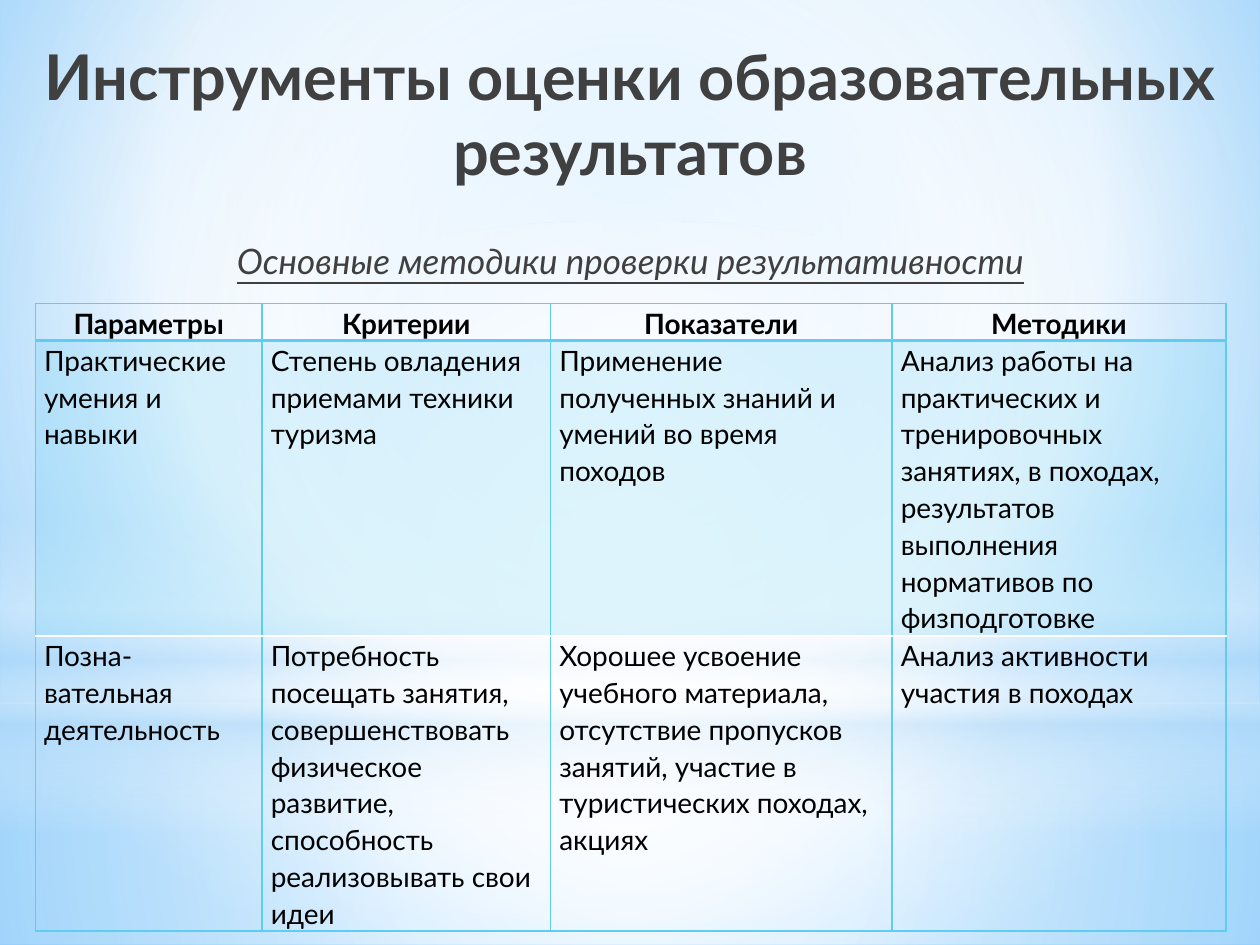
from lxml.etree import SubElement as Sub
from pptx import Presentation
from pptx.dml.color import RGBColor
from pptx.enum.shapes import MSO_SHAPE as Kind
from pptx.enum.text import MSO_ANCHOR as Anchor, MSO_AUTO_SIZE as Auto, PP_ALIGN as Align
from pptx.oxml.ns import qn
from pptx.util import Inches, Pt

FONT, DARK, CYAN = "Lato", "404040", "5ECCF3"
WHITE, PALE = "FFFFFF", "B4DCFA"
MID = (50, 50, 50, 50)
COLS = (1.8, 2.29, 2.71, 2.65)
TALL = (0.28, 2.34, 2.34)
ROWS = (
    ("Параметры", "Критерии", "Показатели", "Методики"),
    (
        "Практические\nумения и навыки",
        "Степень овладения\nприемами техники\nтуризма",
        "Применение\nполученных знаний и умений во время\nпоходов",
        "Анализ работы на практических и тренировочных занятиях, в походах, "
        "результатов выполнения нормативов по физподготовке",
    ),
    (
        "Позна-вательная деятельность",
        "Потребность посещать занятия, совершенствовать физическое развитие, "
        "способность реализовывать свои идеи",
        "Хорошее усвоение учебного материала, отсутствие пропусков занятий, "
        "участие в туристических походах, акциях",
        "Анализ активности участия в походах",
    ),
)


def rgb(code):
    """Turn a hex string into a colour."""
    return RGBColor.from_string(code)


def tint(node, code, alpha=100):
    """Add a colour with its opacity in percent."""
    clr = Sub(node, qn("a:srgbClr"), val=code)
    if alpha < 100:
        Sub(clr, qn("a:alpha"), val=str(alpha * 1000))


def blend(owner, fill, stops, focus=None):
    """Fill the owner with a circular gradient, or a vertical one without focus."""
    fill.solid()
    old = owner.find(".//" + qn("a:solidFill"))
    grad = old.makeelement(qn("a:gradFill"), {"rotWithShape": "1"})
    old.getparent().replace(old, grad)
    marks = Sub(grad, qn("a:gsLst"))
    for pos, code, alpha in stops:
        tint(Sub(marks, qn("a:gs"), pos=str(pos * 1000)), code, alpha)
    if focus:
        sides = {side: str(part * 1000) for side, part in zip("ltrb", focus)}
        Sub(Sub(grad, qn("a:path"), path="circle"), qn("a:fillToRect"), **sides)
    else:
        Sub(grad, qn("a:lin"), ang="5400000", scaled="0")


def glow(slide, kind, top, high, stops, focus=None):
    """Add a full-width gradient shape to the backdrop."""
    shape = slide.shapes.add_shape(kind, 0, Inches(top), Inches(10), Inches(high))
    shape.shadow.inherit = False
    shape.line.fill.background()
    blend(shape.element, shape.fill, stops, focus)


def style(par, size, code, align, bold=False):
    """Set the font and alignment of a paragraph."""
    font = par.font
    font.name, font.size, font.bold = FONT, Pt(size), bold
    font.color.rgb = rgb(code)
    par.alignment = align


def title(slide, text):
    """Fill the title placeholder and bring it above the backdrop."""
    shape = slide.shapes.title
    slide.shapes.element.append(shape.element)
    shape.left, shape.top = Inches(0), Inches(0.2)
    shape.width, shape.height = Inches(10), Inches(1.39)
    frame = shape.text_frame
    frame.text = text
    frame.auto_size, frame.vertical_anchor = Auto.NONE, Anchor.MIDDLE
    style(frame.paragraphs[0], 36, DARK, Align.CENTER, True)


def label(slide, text):
    """Add the underlined heading of the table."""
    box = slide.shapes.add_textbox(Inches(0.4), Inches(1.85), Inches(9.21), Inches(0.44))
    frame = box.text_frame
    frame.word_wrap = True
    frame.text = text
    par = frame.paragraphs[0]
    style(par, 20, DARK, Align.CENTER)
    par.font.italic = par.font.underline = True


def edge(cell, side, width):
    """Draw one border of a cell."""
    line = Sub(cell._tc.get_or_add_tcPr(), qn("a:ln" + side), w=str(Pt(width)))
    tint(Sub(line, qn("a:solidFill")), CYAN)


def write(cell, text, head, align):
    """Set the text, margins and borders of a cell."""
    cell.text = text
    cell.margin_left = cell.margin_right = Inches(0.07)
    cell.margin_top = cell.margin_bottom = 0
    for par in cell.text_frame.paragraphs:
        style(par, 16, "000000", align, head)
        par.line_spacing = 1.1
    for side in "LRTB" if head else "LRB":
        edge(cell, side, 2 if head and side == "B" else 1)


def table(slide):
    """Add the table of methods."""
    grid = slide.shapes.add_table(
        len(ROWS), len(COLS), Inches(0.28), Inches(2.41), Inches(sum(COLS)), Inches(sum(TALL))
    ).table
    grid.first_row = grid.horz_banding = False
    for col, wide in zip(grid.columns, COLS):
        col.width = Inches(wide)
    for i, (row, high) in enumerate(zip(grid.rows, TALL)):
        row.height = Inches(high)
        for j, cell in enumerate(row.cells):
            align = Align.CENTER if i == 0 else Align.JUSTIFY if (i, j) == (2, 0) else Align.LEFT
            write(cell, ROWS[i][j], i == 0, align)
            if i == 1:
                cell.fill.solid()
                cell.fill.fore_color.rgb = rgb(CYAN)
                clr = cell._tc.tcPr.find(qn("a:solidFill"))[0]
                Sub(clr, qn("a:alpha"), val="20000")
            else:
                cell.fill.background()


def scene(slide):
    """Paint the sky-like backdrop."""
    sky = [(0, "9ED5FF", 100), (60, WHITE, 100), (100, "5BB9FF", 100)]
    blend(slide.element, slide.background.fill, sky, (20, 10, 20, 60))
    low = [(0, WHITE, 91), (37, WHITE, 76), (100, PALE, 79)]
    high = [(0, WHITE, 89), (48, WHITE, 62), (100, PALE, 79)]
    band = [(0, WHITE, 0), (29, WHITE, 30), (45, PALE, 40),
            (55, WHITE, 26), (65, PALE, 60), (100, WHITE, 0)]
    glow(slide, Kind.RECTANGLE, 5.58, 1.92, low, MID)
    glow(slide, Kind.RECTANGLE, 0, 5.58, high, MID)
    glow(slide, Kind.RECTANGLE, 4.12, 2.5, band)
    glow(slide, Kind.OVAL, 1.75, 5.58, [(0, WHITE, 100), (56, WHITE, 0)], MID)


def main():
    """Build and save the slide."""
    deck = Presentation()
    deck.slide_width, deck.slide_height = Inches(10), Inches(7.5)
    slide = deck.slides.add_slide(deck.slide_layouts[5])
    scene(slide)
    title(slide, "Инструменты оценки образовательных результатов")
    label(slide, "Основные методики проверки результативности")
    table(slide)
    deck.save("out.pptx")


if __name__ == "__main__":
    main()
